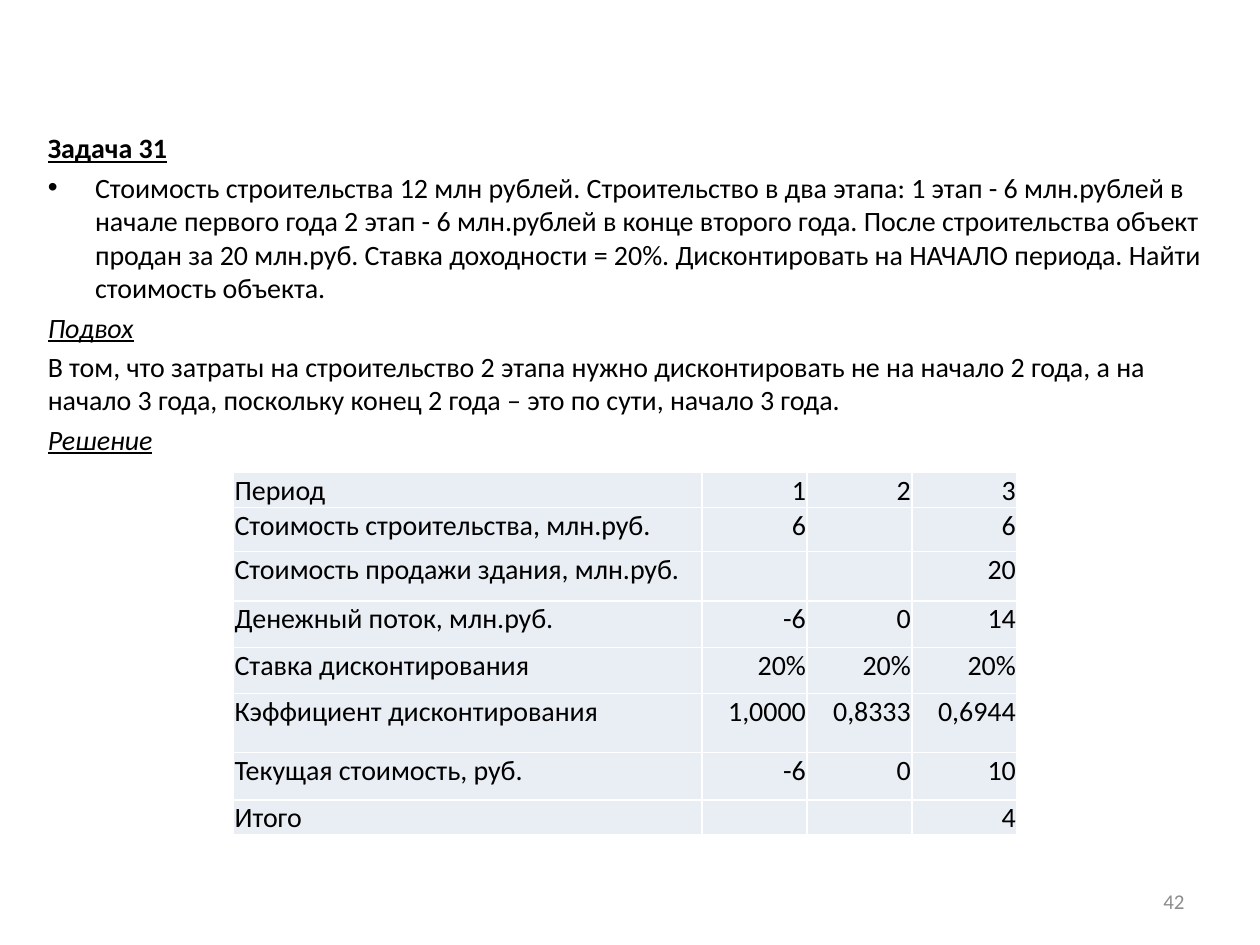
from dataclasses import dataclass, field

import lxml.etree
import pptx
import pptx.dml.color
import pptx.enum.text
import pptx.oxml.ns
import pptx.util

Pt = pptx.util.Pt
qn = pptx.oxml.ns.qn
ALIGN = pptx.enum.text.PP_ALIGN
ANCHOR = pptx.enum.text.MSO_ANCHOR

BLACK, WHITE, GREY, CELL_FILL = "000000", "FFFFFF", "8C8C8C", "E9EDF4"
BODY_FORMAT = {"name": "Calibri", "size": Pt(16)}
HEADING = {"bold": True, "underline": True}
SUBHEADING = {"italic": True, "underline": True}
BULLET_INDENT = 27


@dataclass
class BodyParagraph:
    text: str
    format: dict = field(default_factory=dict)
    bulleted: bool = False


@dataclass
class TableRow:
    height: float
    label: str
    values: tuple[str, str, str]


BODY = [
    BodyParagraph("Задача 31", HEADING),
    BodyParagraph(
        "Стоимость строительства 12 млн рублей. Строительство в два этапа: "
        "1 этап - 6 млн.рублей в начале первого года 2 этап - 6 млн.рублей в конце "
        "второго года. После строительства объект продан за 20 млн.руб. Ставка "
        "доходности = 20%. Дисконтировать на НАЧАЛО периода. Найти стоимость объекта.",
        bulleted=True),
    BodyParagraph("Подвох", SUBHEADING),
    BodyParagraph(
        "В том, что затраты на строительство 2 этапа нужно дисконтировать не на "
        "начало 2 года, а на начало 3 года, поскольку конец 2 года – это по сути, "
        "начало 3 года."),
    BodyParagraph("Решение", SUBHEADING),
]

COLUMN_WIDTHS = [267.8, 60, 60, 60]
ROWS = [
    TableRow(17.5, "Период", ("1", "2", "3")),
    TableRow(25.2, "Стоимость строительства, млн.руб.", ("6", "", "6")),
    TableRow(28.3, "Стоимость продажи здания, млн.руб.", ("", "", "20")),
    TableRow(26.5, "Денежный поток, млн.руб.", ("-6", "0", "14")),
    TableRow(26.5, "Ставка дисконтирования", ("20%", "20%", "20%")),
    TableRow(33.8, "Кэффициент дисконтирования", ("1,0000", "0,8333", "0,6944")),
    TableRow(27, "Текущая стоимость, руб.", ("-6", "0", "10")),
    TableRow(17.5, "Итого", ("", "", "4")),
]


def color(value: str) -> pptx.dml.color.RGBColor:
    return pptx.dml.color.RGBColor.from_string(value)


def add_text(paragraph, text: str, text_color: str = BLACK, **changes) -> None:
    run = paragraph.add_run()
    run.text = text
    for name, value in (BODY_FORMAT | changes).items():
        setattr(run.font, name, value)
    run.font.color.rgb = color(text_color)


def add_text_box(slide, left: float, top: float, width: float, height: float):
    box = slide.shapes.add_textbox(Pt(left), Pt(top), Pt(width), Pt(height))
    box.text_frame.word_wrap = True
    return box.text_frame


def add_bullet(paragraph) -> None:
    properties = paragraph._p.get_or_add_pPr()
    properties.set("marL", str(Pt(BULLET_INDENT)))
    properties.set("indent", str(-Pt(BULLET_INDENT)))
    lxml.etree.SubElement(properties, qn("a:buFont"), typeface="Arial")
    lxml.etree.SubElement(properties, qn("a:buChar"), char="•")


def add_body(slide) -> None:
    frame = add_text_box(slide, 20.2, 71.3, 680.4, 425.5)
    for index, item in enumerate(BODY):
        paragraph = frame.add_paragraph() if index else frame.paragraphs[0]
        if item.bulleted:
            add_bullet(paragraph)
        if index:
            paragraph.space_before = Pt(3.2)
        add_text(paragraph, item.text, **item.format)


def add_borders(cell) -> None:
    properties = cell._tc.get_or_add_tcPr()
    for position, side in enumerate(("a:lnL", "a:lnR", "a:lnT", "a:lnB")):
        line = lxml.etree.Element(qn(side), w=str(Pt(1)))
        fill = lxml.etree.SubElement(line, qn("a:solidFill"))
        lxml.etree.SubElement(fill, qn("a:srgbClr"), val=WHITE)
        properties.insert(position, line)


def fill_cell(cell, text: str, alignment) -> None:
    margins = {"margin_left": 0.7, "margin_right": 0.7, "margin_top": 0.7, "margin_bottom": 0}
    for name, value in margins.items():
        setattr(cell, name, Pt(value))
    cell.fill.solid()
    cell.fill.fore_color.rgb = color(CELL_FILL)
    add_borders(cell)
    paragraph = cell.text_frame.paragraphs[0]
    paragraph.alignment = alignment
    if text:
        add_text(paragraph, text)
    else:
        # An empty cell keeps the text size so that its row does not grow
        lxml.etree.SubElement(paragraph._p, qn("a:endParaRPr"), sz="1600")


def add_cash_flow_table(slide) -> None:
    frame = slide.shapes.add_table(
        len(ROWS), len(COLUMN_WIDTHS), Pt(133.4), Pt(270),
        Pt(sum(COLUMN_WIDTHS)), Pt(sum(row.height for row in ROWS)))
    table = frame.table
    table.first_row = table.horz_banding = False
    for column, width in zip(table.columns, COLUMN_WIDTHS):
        column.width = Pt(width)
    for row_index, row in enumerate(ROWS):
        table.rows[row_index].height = Pt(row.height)
        for column_index, text in enumerate((row.label, *row.values)):
            alignment = ALIGN.RIGHT if column_index else ALIGN.LEFT
            fill_cell(table.cell(row_index, column_index), text, alignment)


def add_slide_number(slide, number: str) -> None:
    frame = add_text_box(slide, 516, 500.5, 168, 28.75)
    frame.vertical_anchor = ANCHOR.MIDDLE
    frame.paragraphs[0].alignment = ALIGN.RIGHT
    add_text(frame.paragraphs[0], number, GREY, size=Pt(12))


def main() -> None:
    presentation = pptx.Presentation()
    presentation.slide_width, presentation.slide_height = Pt(720), Pt(540)
    slide = presentation.slides.add_slide(presentation.slide_layouts[6])

    # Problem statement, page number and solution table
    add_body(slide)
    add_slide_number(slide, "42")
    add_cash_flow_table(slide)

    presentation.save("out.pptx")


if __name__ == "__main__":
    main()
